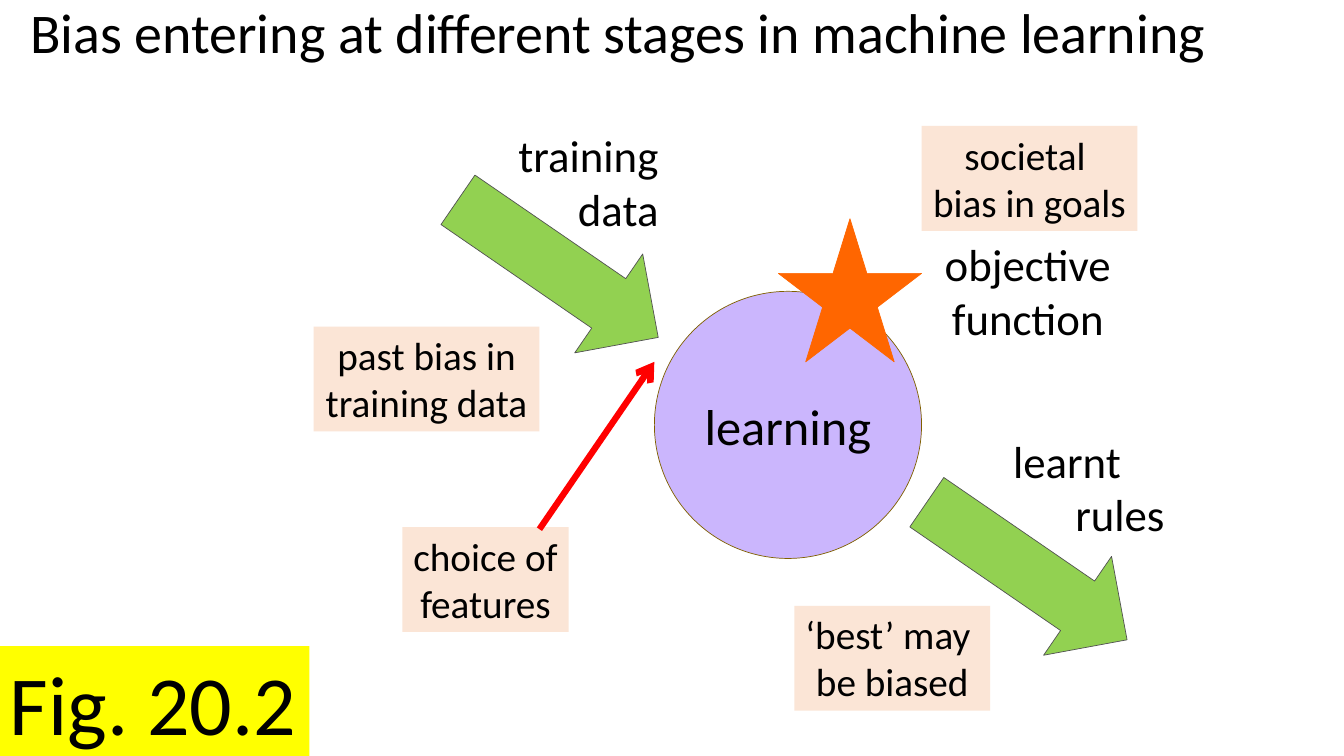
from lxml import etree
from pptx import Presentation
from pptx.dml.color import RGBColor
from pptx.enum import shapes, text
from pptx.oxml import ns
from pptx.util import Inches, Pt

COLOURS = {
    "ink": "000000", "caption": "FFFF00", "circle": "CBB6FD",
    "circle_edge": "806000", "tag": "FBE5D6", "flow": "92D151",
    "flow_edge": "525252", "star": "FF6600", "pointer": "FF0000",
}
FONT = "Calibri"
SHAPE = shapes.MSO_SHAPE
ALIGN = text.PP_ALIGN


def colour(name):
    return RGBColor.from_string(COLOURS[name])


def place(box, left, top, width, height):
    return [Inches(box[0] + left), Inches(box[1] + top), Inches(width), Inches(height)]


def write(frame, words, size, align=ALIGN.CENTER, anchor=text.MSO_ANCHOR.TOP, wrap=False):
    frame.text = words
    frame.word_wrap = wrap
    frame.vertical_anchor = anchor
    for para in frame.paragraphs:
        para.alignment = align
        para.font.name = FONT
        para.font.size = Pt(size)
        para.font.color.rgb = colour("ink")


def add_figure(page, kind, place_at, fill, edge=None):
    figure = page.shapes.add_shape(kind, *place_at)
    figure.shadow.inherit = False
    figure.fill.solid()
    figure.fill.fore_color.rgb = colour(fill)
    if edge:
        figure.line.color.rgb = colour(edge)
        figure.line.width = Pt(0.5)
    else:
        figure.line.fill.background()
    return figure


def add_label(page, place_at, words, align):
    label = page.shapes.add_textbox(*place_at)
    write(label.text_frame, words, 32, align, wrap=True)
    return label


def add_pointer(page, box, start, end):
    ends = [Inches(box[i] + point[i]) for point in (start, end) for i in (0, 1)]
    pointer = page.shapes.add_connector(shapes.MSO_CONNECTOR.STRAIGHT, *ends)
    pointer.line.color.rgb = colour("pointer")
    pointer.line.width = Pt(4.5)
    etree.SubElement(pointer.line._get_or_add_ln(), ns.qn("a:tailEnd"), type="arrow")
    etree.SubElement(pointer._element.spPr, ns.qn("a:effectLst"))


def add_title(page, box):
    title = page.shapes.title
    title.left, title.top, title.width, title.height = place(box, 0, 0, box[2], box[3])
    write(title.text_frame, "Bias entering at different stages in machine learning",
          40, ALIGN.LEFT, wrap=True)
    title.text_frame.paragraphs[0].line_spacing = 0.9


def add_caption(page, box):
    caption = add_figure(page, SHAPE.RECTANGLE, place(box, 0, 0, box[2], box[3]), "caption")
    write(caption.text_frame, "Fig. 20.2", 60, ALIGN.LEFT)


def add_diagram(page, box):
    circle = add_figure(page, SHAPE.OVAL, place(box, 3.38, 1.67, 2.65, 2.65),
                        "circle", "circle_edge")
    write(circle.text_frame, "learning", 36, anchor=text.MSO_ANCHOR.MIDDLE, wrap=True)

    for left, top in [(1.22, 0.85), (5.87, 3.85)]:
        flow = add_figure(page, SHAPE.RIGHT_ARROW, place(box, left, top, 2.41, 1.19),
                          "flow", "flow_edge")
        flow.rotation = 34.5

    add_figure(page, SHAPE.STAR_5_POINT, place(box, 4.61, 0.95, 1.42, 1.42), "star", "star")

    add_label(page, place(box, 1.9, 0, 1.62, 1.18), "training\vdata", ALIGN.RIGHT)
    add_label(page, place(box, 6.15, 1.08, 1.87, 1.18), "objective\vfunction", ALIGN.CENTER)
    rules = add_label(page, place(box, 6.84, 3.03, 1.7, 1.18), "learnt\nrules", ALIGN.LEFT)
    rules.text_frame.paragraphs[1].alignment = ALIGN.RIGHT

    for left, top, width, words in [
        (0, 2.02, 2.24, "past bias in\vtraining data"),
        (6.03, 0.03, 2.14, "societal \vbias in goals"),
        (4.77, 4.79, 1.94, "‘best’ may \vbe biased"),
        (0.88, 4.01, 1.65, "choice of\vfeatures"),
    ]:
        tag = add_figure(page, SHAPE.RECTANGLE, place(box, left, top, width, 1.04), "tag")
        write(tag.text_frame, words, 28)

    add_pointer(page, box, (2.24, 4.03), (3.38, 2.37))


def main():
    deck = Presentation()
    deck.slide_width, deck.slide_height = Inches(13.33), Inches(7.5)
    page = deck.slides.add_slide(deck.slide_layouts[5])
    add_caption(page, (0, 6.41, 3.07, 1.11))
    add_title(page, (0.2, 0, 12.93, 1.78))
    add_diagram(page, (3.11, 1.22, 8.54, 5.83))
    deck.save("out.pptx")


if __name__ == "__main__":
    main()
